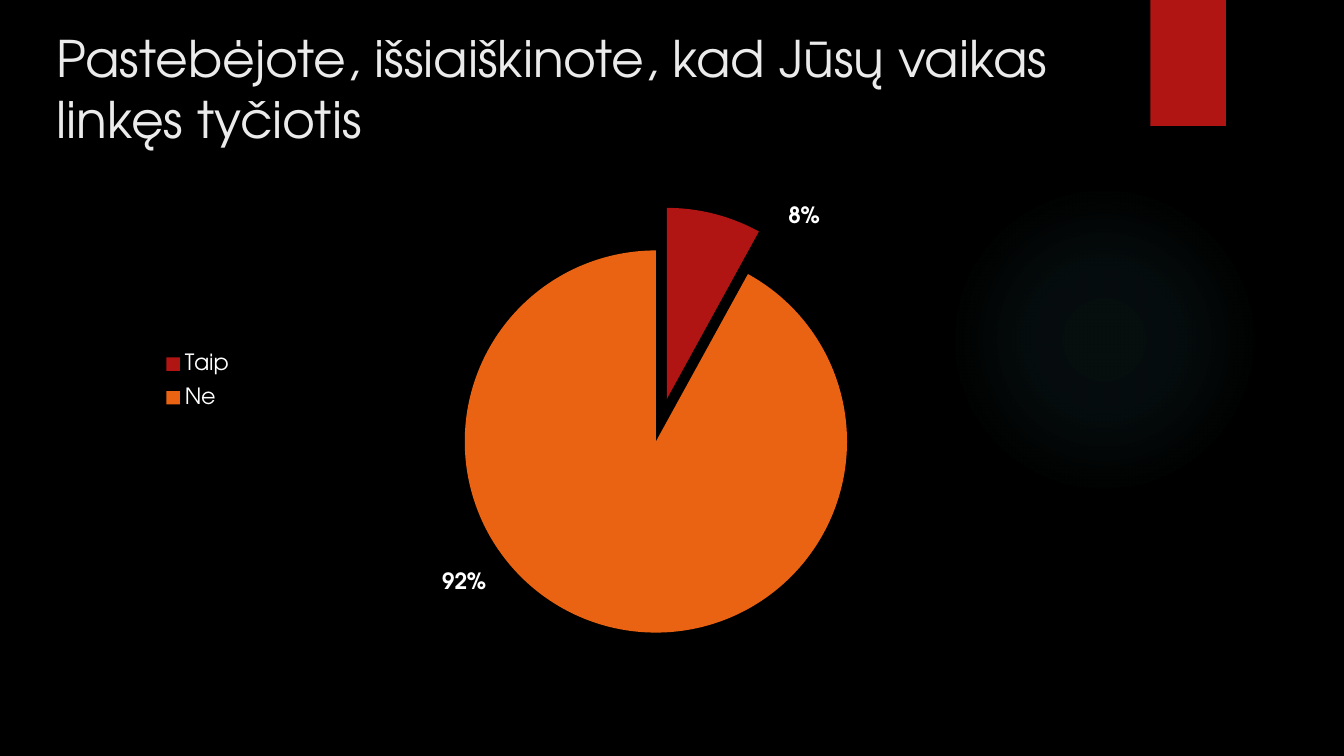
from copy import deepcopy
from dataclasses import dataclass

from lxml.etree import QName
from pptx import Presentation
from pptx.chart.data import CategoryChartData
from pptx.dml.color import RGBColor
from pptx.enum.chart import XL_CHART_TYPE as ChartType
from pptx.enum.chart import XL_LABEL_POSITION as LabelPosition
from pptx.enum.chart import XL_LEGEND_POSITION as LegendPosition
from pptx.enum.shapes import MSO_SHAPE as Preset
from pptx.enum.text import MSO_ANCHOR as Anchor
from pptx.enum.text import PP_ALIGN as Align
from pptx.oxml import parse_xml
from pptx.oxml.ns import nsdecls, qn
from pptx.util import Pt

PX = 9144  # EMU per px, 100 px to the inch
TITLE_ONLY = 5


@dataclass(frozen=True)
class Theme:
    font: str = "TeX Gyre Adventor"
    background: str = "000000"
    title: str = "EBEBEB"
    text: str = "FFFFFF"
    red: str = "B01513"
    orange: str = "EA6312"
    glow: str = "50B9C1"
    title_size: int = 36
    chart_size: int = 18
    label_size: int = 16


def apply(target, formats):
    for name, value in formats.items():
        setattr(target, name, value)


def chart_element(tag, value):
    return parse_xml(f'<c:{tag} {nsdecls("c")} val="{value}"/>')


def manual_layout(**values):
    settings = "".join(f'<c:{tag} val="{value}"/>' for tag, value in values.items())
    return parse_xml(f'<c:layout {nsdecls("c")}><c:manualLayout>{settings}'
                     '</c:manualLayout></c:layout>')


def set_layout(parent, position, **values):
    for layout in parent.findall(qn("c:layout")):
        parent.remove(layout)
    parent.insert(position, manual_layout(**values))


class SlideBuilder:
    def __init__(self, presentation, theme):
        self.theme = theme
        self.slide = presentation.slides.add_slide(presentation.slide_layouts[TITLE_ONLY])
        fill = self.slide.background.fill
        fill.solid()
        fill.fore_color.rgb = RGBColor.from_string(theme.background)

    def format_font(self, font, size, color, bold=False):
        apply(font, {"name": self.theme.font, "size": Pt(size), "bold": bold})
        font.color.rgb = RGBColor.from_string(color)

    def title(self, text, left, top, width, height):
        shape = self.slide.shapes.title
        apply(shape, {"left": left * PX, "top": top * PX,
                      "width": width * PX, "height": height * PX})
        frame = shape.text_frame
        frame.text = text
        apply(frame, {"word_wrap": True, "vertical_anchor": Anchor.TOP})
        paragraph = frame.paragraphs[0]
        paragraph.alignment = Align.LEFT
        self.format_font(paragraph.runs[0].font, self.theme.title_size, self.theme.title)

    def shape(self, preset, left, top, width, height, color):
        shape = self.slide.shapes.add_shape(
            preset, left * PX, top * PX, width * PX, height * PX)
        shape.shadow.inherit = False
        shape.fill.solid()
        shape.fill.fore_color.rgb = RGBColor.from_string(color)
        shape.line.fill.background()
        return shape

    def glow(self, left, top, size, stops):
        """Circle with a radial fade; stops are (position %, opacity %)."""
        color = self.theme.glow
        shape = self.shape(Preset.OVAL, left, top, size, size, color)
        stop_xml = "".join(
            f'<a:gs pos="{position * 1000}"><a:srgbClr val="{color}">'
            f'<a:alpha val="{opacity * 1000}"/></a:srgbClr></a:gs>'
            for position, opacity in stops)
        gradient = parse_xml(
            f'<a:gradFill {nsdecls("a")}><a:gsLst>{stop_xml}</a:gsLst><a:path path="circle">'
            '<a:fillToRect l="50000" t="50000" r="50000" b="50000"/></a:path></a:gradFill>')
        properties = shape.element.spPr
        properties.replace(properties.find(qn("a:solidFill")), gradient)

    def pie(self, left, top, width, height, slices, explosion):
        """Slices are (name, value, color, explosion, label offset)."""
        theme = self.theme
        data = CategoryChartData()
        data.categories = [name for name, *_ in slices]
        data.add_series("Series 1", [value for _, value, *_ in slices])
        chart = self.slide.shapes.add_chart(
            ChartType.PIE, left * PX, top * PX, width * PX, height * PX, data).chart
        apply(chart, {"has_title": False, "has_legend": True})
        self.format_font(chart.font, theme.chart_size, theme.text)
        plot = chart.plots[0]
        plot.vary_by_categories = True
        series = plot.series[0]

        # Slice colours and explosion
        for index, (_, _, color, distance, _) in enumerate(slices):
            fill = series.points[index].format.fill
            fill.solid()
            fill.fore_color.rgb = RGBColor.from_string(color)
        points = series._element.findall(qn("c:dPt"))
        points[0].addprevious(chart_element("explosion", explosion))
        for point, (_, _, _, distance, _) in zip(points, slices):
            point.find(qn("c:spPr")).addprevious(chart_element("explosion", distance))

        self.percent_labels(series, [offset for *_, offset in slices])

        # Plot area and legend places
        set_layout(plot._element.getparent(), 0, layoutTarget="inner",
                   xMode="edge", yMode="edge", x=0.328, y=0.062, w=0.335, h=0.813)
        legend = chart.legend
        apply(legend, {"position": LegendPosition.RIGHT, "include_in_layout": False})
        self.format_font(legend.font, theme.label_size, theme.text)
        set_layout(legend._element, 1, xMode="edge", yMode="edge",
                   x=0.07, y=0.33, w=0.08, h=0.16)

    def percent_labels(self, series, offsets):
        labels = series.data_labels
        apply(labels, {"show_value": False, "show_percentage": True,
                       "number_format": "0%", "number_format_is_linked": False,
                       "position": LabelPosition.OUTSIDE_END})
        self.format_font(labels.font, self.theme.label_size, self.theme.text, bold=True)
        group = labels._element
        for leader in group.findall(qn("c:showLeaderLines")):
            group.remove(leader)
        shared = list(group)
        for index, (x, y) in enumerate(offsets):
            label = parse_xml(f'<c:dLbl {nsdecls("c")}><c:idx val="{index}"/></c:dLbl>')
            label.append(manual_layout(x=x, y=y))
            label.extend(deepcopy(child) for child in shared
                         if QName(child).localname != "separator")
            group.insert(index, label)
        group.append(chart_element("showLeaderLines", 0))


def main():
    presentation = Presentation()
    apply(presentation, {"slide_width": 1333 * PX, "slide_height": 750 * PX})
    theme = Theme()
    builder = SlideBuilder(presentation, theme)

    # Backdrop
    builder.glow(941, 183, 308, [(0, 7), (36, 6), (69, 0)])
    builder.shape(Preset.RECTANGLE, 1141, 0, 75, 125, theme.red)

    # Question and answers
    builder.title("Pastebėjote, išsiaiškinote, kad Jūsų vaikas linkęs tyčiotis",
                  46, 22, 1122, 153)
    builder.pie(64, 175, 1200, 495, [
        ("Taip", 8, theme.red, 6, (0.06, 0.04)),
        ("Ne", 92, theme.orange, 17, (-0.1, -0.12)),
    ], explosion=6)
    presentation.save("out.pptx")


if __name__ == "__main__":
    main()
